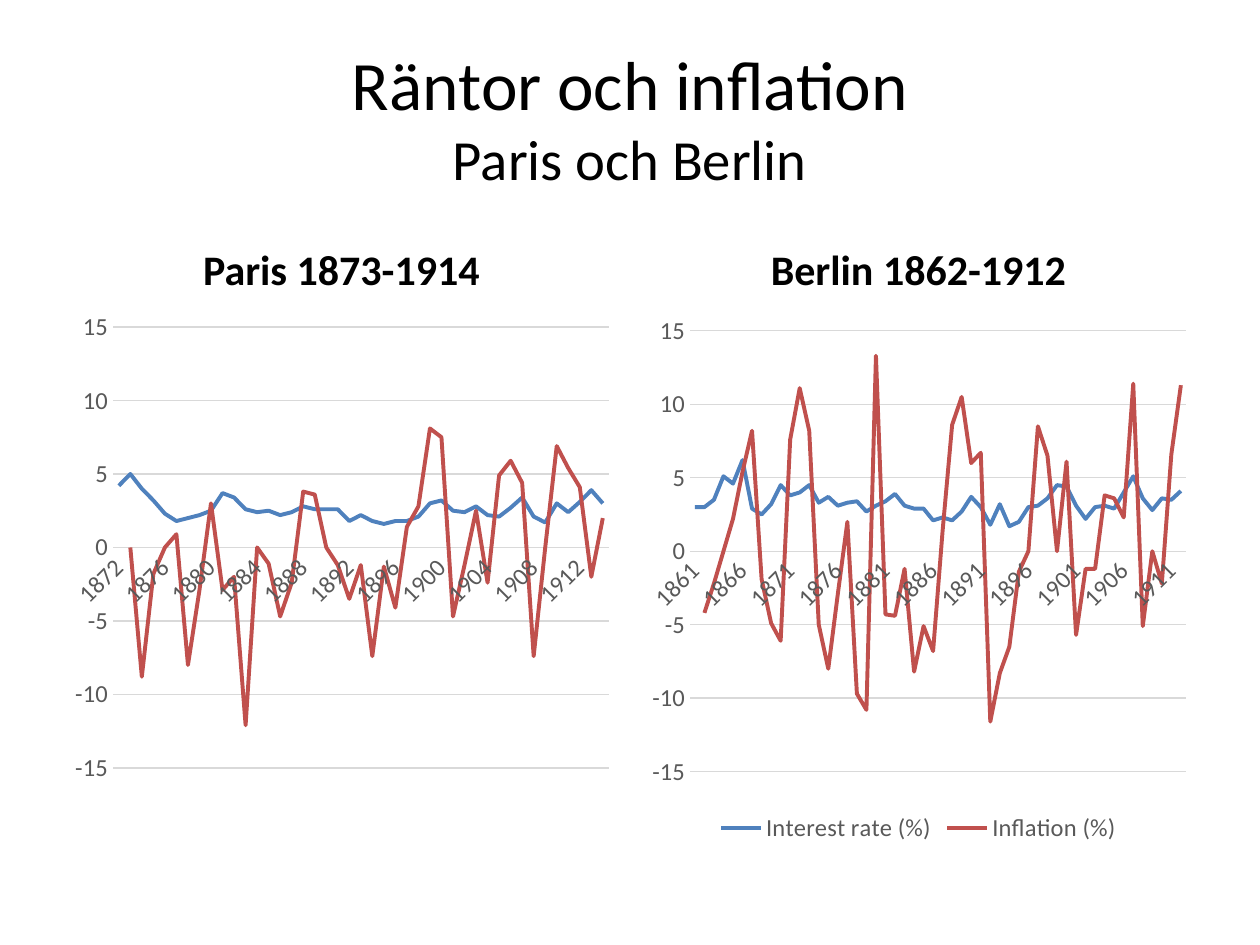
from pptx import Presentation
from pptx.chart.data import CategoryChartData
from pptx.dml.color import RGBColor
from pptx.enum.chart import XL_CHART_TYPE, XL_LEGEND_POSITION, XL_TICK_MARK
from pptx.enum.text import MSO_ANCHOR, PP_ALIGN
from pptx.oxml import parse_xml
from pptx.oxml.ns import nsdecls
from pptx.util import Inches, Pt

FONT = "Calibri"
COLORS = {"text": "000000", "label": "595959", "grid": "D9D9D9",
          "rate": "4F81BD", "infl": "C0504D"}
LEFT, RIGHT, WIDTH = 0.5, 5.08, 4.42

PARIS = {
    "years": range(1872, 1915),
    "rate": [4.2, 5, 4, 3.2, 2.3, 1.8, 2, 2.2, 2.5, 3.7, 3.4, 2.6, 2.4, 2.5,
             2.2, 2.4, 2.8, 2.6, 2.6, 2.6, 1.8, 2.2, 1.8, 1.6, 1.8, 1.8, 2.1,
             3, 3.2, 2.5, 2.4, 2.8, 2.2, 2.1, 2.7, 3.4, 2.1, 1.7, 3, 2.4, 3.1,
             3.9, 3],
    "infl": [None, 0, -8.8, -1.8, 0, 0.9, -8, -2.9, 3, -2.9, -2, -12.1, 0,
             -1.1, -4.7, -2.4, 3.8, 3.6, 0, -1.2, -3.5, -1.2, -7.4, -1.3,
             -4.1, 1.4, 2.8, 8.1, 7.5, -4.7, -1.2, 2.5, -2.4, 4.9, 5.9, 4.4,
             -7.4, 0, 6.9, 5.4, 4.1, -2, 2],
}
BERLIN = {
    "years": range(1861, 1913),
    "rate": [3, 3, 3.5, 5.1, 4.6, 6.2, 2.9, 2.5, 3.2, 4.5, 3.8, 4, 4.5, 3.3,
             3.7, 3.1, 3.3, 3.4, 2.7, 3.1, 3.4, 3.9, 3.1, 2.9, 2.9, 2.1, 2.3,
             2.1, 2.7, 3.7, 3, 1.8, 3.2, 1.7, 2, 3, 3.1, 3.6, 4.5, 4.4, 3.1,
             2.2, 3, 3.1, 2.9, 4, 5.1, 3.6, 2.8, 3.6, 3.5, 4.1],
    "infl": [None, -4.2, -2.2, 0, 2.2, 5.4, 8.2, -1.9, -4.9, -6.1, 7.6, 11.1,
             8.2, -5, -8, -2.9, 2, -9.7, -10.8, 13.3, -4.3, -4.4, -1.2, -8.2,
             -5.1, -6.8, 1.4, 8.6, 10.5, 6, 6.7, -11.6, -8.3, -6.5, -1.4, 0,
             8.5, 6.5, 0, 6.1, -5.7, -1.2, -1.2, 3.8, 3.6, 2.3, 11.4, -5.1,
             0, -2.2, 6.6, 11.3],
}


def rgb(name):
    return RGBColor.from_string(COLORS[name])


def style(font, size, color, bold=False):
    font.name, font.size, font.bold = FONT, Pt(size), bold
    font.color.rgb = rgb(color)


def draw_line(line, color, width):
    line.color.rgb = rgb(color)
    line.width = Pt(width)


def add_text(slide, box, anchor):
    """Add a centred text box and return its first paragraph."""
    frame = slide.shapes.add_textbox(*map(Inches, box)).text_frame
    frame.word_wrap = True
    frame.vertical_anchor = anchor
    para = frame.paragraphs[0]
    para.alignment = PP_ALIGN.CENTER
    return para


def add_title(slide):
    para = add_text(slide, (0.5, 0.3, 9, 1.25), MSO_ANCHOR.MIDDLE)
    style(para.font, 39.6, "text")
    para.add_run().text = "Räntor och inflation"
    para.add_line_break()
    city = para.add_run()
    city.text = "Paris och Berlin"
    city.font.size = Pt(32.4)


def add_head(slide, left, text):
    para = add_text(slide, (left, 1.68, WIDTH, 0.7), MSO_ANCHOR.BOTTOM)
    para.text = text
    style(para.font, 24, "text", True)


def set_layout(chart):
    """Fix the inner plot area as shares of the chart frame."""
    area = chart.element.xpath("c:chart/c:plotArea")[0]
    for old in area.xpath("c:layout"):
        area.remove(old)
    share = {"x": 0.09, "y": 0.05, "w": 0.89, "h": 0.81}
    parts = '<c:layoutTarget val="inner"/>'
    parts += "".join(f'<c:{k}Mode val="edge"/>' for k in "xy")
    parts += "".join(f'<c:{k} val="{v}"/>' for k, v in share.items())
    area.insert(0, parse_xml(
        f'<c:layout {nsdecls("c")}><c:manualLayout>{parts}'
        '</c:manualLayout></c:layout>'))


def slant_years(chart, step):
    """Turn the year labels by 45 degrees and show one in every step."""
    axis = chart.element.xpath(".//c:catAx")[0]
    axis.xpath("c:txPr/a:bodyPr")[0].set("rot", "-2700000")
    skip = parse_xml(f'<c:tickLblSkip {nsdecls("c")} val="{step}"/>')
    axis.xpath("c:noMultiLvlLbl")[0].addprevious(skip)


def add_lines(slide, left, top, city, step, legend):
    data = CategoryChartData()
    data.categories = [str(year) for year in city["years"]]
    data.add_series("Interest rate (%)", city["rate"])
    data.add_series("Inflation (%)", city["infl"])
    box = map(Inches, (left, top, WIDTH, 4.32))
    chart = slide.shapes.add_chart(XL_CHART_TYPE.LINE, *box, data).chart
    chart.has_title = False
    style(chart.font, 10, "text")
    chart.plots[0].vary_by_categories = False
    for line, color in zip(chart.plots[0].series, ("rate", "infl")):
        line.smooth = False
        draw_line(line.format.line, color, 2.25)

    years, rates = chart.category_axis, chart.value_axis
    for axis in (years, rates):
        axis.major_tick_mark = axis.minor_tick_mark = XL_TICK_MARK.NONE
        style(axis.tick_labels.font, 14, "label")
    years.has_major_gridlines = False
    draw_line(years.format.line, "grid", 0.75)
    rates.minimum_scale, rates.maximum_scale = -15, 15
    rates.major_unit = 5
    rates.tick_labels.number_format = "#,##0"
    rates.tick_labels.number_format_is_linked = False
    rates.format.line.fill.background()
    draw_line(rates.major_gridlines.format.line, "grid", 0.75)

    chart.has_legend = legend
    if legend:
        chart.legend.position = XL_LEGEND_POSITION.BOTTOM
        chart.legend.include_in_layout = False
        style(chart.legend.font, 14, "label")
    set_layout(chart)
    slant_years(chart, step)


def main():
    deck = Presentation()
    deck.slide_width, deck.slide_height = Inches(10), Inches(7.5)
    slide = deck.slides.add_slide(deck.slide_layouts[6])
    add_title(slide)
    add_head(slide, LEFT, "Paris 1873-1914")
    add_head(slide, RIGHT, "Berlin 1862-1912")
    add_lines(slide, LEFT, 2.38, PARIS, 4, False)
    add_lines(slide, RIGHT, 2.41, BERLIN, 5, True)
    deck.save("out.pptx")


if __name__ == "__main__":
    main()
